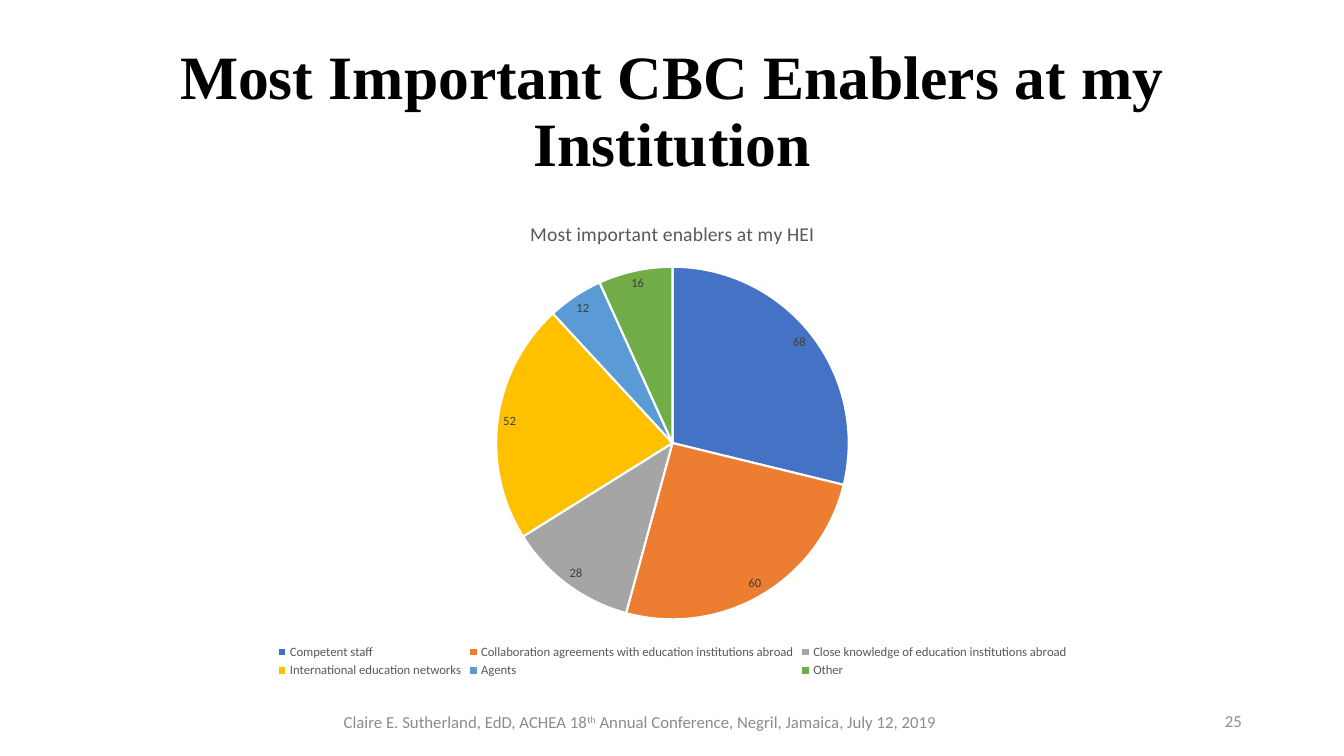
"""Build the slide on the most important CBC enablers, with a pie chart."""
from pptx import Presentation
from pptx.chart.data import CategoryChartData
from pptx.dml.color import RGBColor
from pptx.enum.chart import XL_CHART_TYPE, XL_LABEL_POSITION, XL_LEGEND_POSITION
from pptx.enum.text import MSO_ANCHOR, MSO_AUTO_SIZE, PP_ALIGN
from pptx.util import Pt

PIE = XL_CHART_TYPE.PIE
BEST_FIT = XL_LABEL_POSITION.BEST_FIT
BOTTOM = XL_LEGEND_POSITION.BOTTOM
MIDDLE = MSO_ANCHOR.MIDDLE
NO_AUTOFIT = MSO_AUTO_SIZE.NONE
CENTER, RIGHT = PP_ALIGN.CENTER, PP_ALIGN.RIGHT

BLACK = RGBColor(0x00, 0x00, 0x00)
WHITE = RGBColor(0xFF, 0xFF, 0xFF)
FOOTER_GRAY = RGBColor(0x8C, 0x8C, 0x8C)
CHART_GRAY = RGBColor(0x59, 0x59, 0x59)
LABEL_GRAY = RGBColor(0x40, 0x40, 0x40)
BLUE = RGBColor(0x44, 0x72, 0xC4)
ORANGE = RGBColor(0xED, 0x7D, 0x31)
GRAY = RGBColor(0xA5, 0xA5, 0xA5)
GOLD = RGBColor(0xFF, 0xC0, 0x00)
LIGHT_BLUE = RGBColor(0x5B, 0x9B, 0xD5)
GREEN = RGBColor(0x70, 0xAD, 0x47)

TITLE = "Most Important CBC Enablers at my Institution"
CHART_TITLE = "Most important enablers at my HEI"
ENABLERS = [
    ("Competent staff", 68, BLUE),
    ("Collaboration agreements with education institutions abroad", 60, ORANGE),
    ("Close knowledge of education institutions abroad", 28, GRAY),
    ("International education networks", 52, GOLD),
    ("Agents", 12, LIGHT_BLUE),
    ("Other", 16, GREEN),
]
FOOTER = [
    ("Claire E. Sutherland, EdD, ACHEA 18", False),
    ("th", True),
    (" Annual Conference, Negril, Jamaica, July 12, 2019", False),
]
PAGE_NUMBER = [("25", False)]

EMU_PER_PX = 914400 / 100.8
SLIDE_SIZE = (1344, 756)
TITLE_BOX = (93, 40, 1159, 146)
CHART_BOX = (93, 202, 1159, 480)
FOOTER_BOX = (108, 702, 1064, 40)
NUMBER_BOX = (950, 701, 302, 40)
SUPERSCRIPT = "30000"


def emu(lengths):
    return [round(length * EMU_PER_PX) for length in lengths]


def style_font(font, size, color, name="Calibri", bold=False):
    font.size = Pt(size)
    font.name = name
    font.bold = bold
    font.color.rgb = color


def write_text(shape, runs, size=12, color=FOOTER_GRAY, name="Calibri",
               bold=False, align=CENTER, line_spacing=1.0):
    frame = shape.text_frame
    frame.word_wrap = True
    frame.auto_size = NO_AUTOFIT
    frame.vertical_anchor = MIDDLE
    paragraph = frame.paragraphs[0]
    paragraph.alignment = align
    paragraph.line_spacing = line_spacing
    for text, raised in runs:
        run = paragraph.add_run()
        run.text = text
        style_font(run.font, size, color, name, bold)
        if raised:
            run._r.get_or_add_rPr().set("baseline", SUPERSCRIPT)


def add_enabler_chart(slide):
    data = CategoryChartData(number_format="0")
    data.categories = [name for name, _, _ in ENABLERS]
    data.add_series("Series 1", [value for _, value, _ in ENABLERS])
    chart = slide.shapes.add_chart(PIE, *emu(CHART_BOX), data).chart
    style_font(chart.font, 10, BLACK)

    chart.has_title = True
    title_frame = chart.chart_title.text_frame
    title_frame.text = CHART_TITLE
    style_font(title_frame.paragraphs[0].runs[0].font, 14, CHART_GRAY)
    chart.chart_title.include_in_layout = False

    chart.has_legend = True
    chart.legend.position = BOTTOM
    chart.legend.include_in_layout = False
    style_font(chart.legend.font, 9.1, CHART_GRAY)

    plot = chart.plots[0]
    plot.vary_by_categories = True
    plot.has_data_labels = True
    labels = plot.data_labels
    labels.show_value = True
    labels.show_percentage = False
    labels.number_format = "0"
    labels.number_format_is_linked = False
    labels.position = BEST_FIT
    style_font(labels.font, 9, LABEL_GRAY)

    for index, (_, _, color) in enumerate(ENABLERS):
        slice_format = plot.series[0].points[index].format
        slice_format.fill.solid()
        slice_format.fill.fore_color.rgb = color
        slice_format.line.color.rgb = WHITE
        slice_format.line.width = Pt(1.5)


def main():
    presentation = Presentation()
    presentation.slide_width, presentation.slide_height = emu(SLIDE_SIZE)
    slide = presentation.slides.add_slide(presentation.slide_layouts[5])

    title = slide.shapes.title
    title.left, title.top, title.width, title.height = emu(TITLE_BOX)
    write_text(title, [(TITLE, False)], size=44, color=BLACK,
               name="Times New Roman", bold=True, line_spacing=0.9)

    write_text(slide.shapes.add_textbox(*emu(FOOTER_BOX)), FOOTER)
    write_text(slide.shapes.add_textbox(*emu(NUMBER_BOX)), PAGE_NUMBER, align=RIGHT)
    add_enabler_chart(slide)
    presentation.save("out.pptx")


if __name__ == "__main__":
    main()
